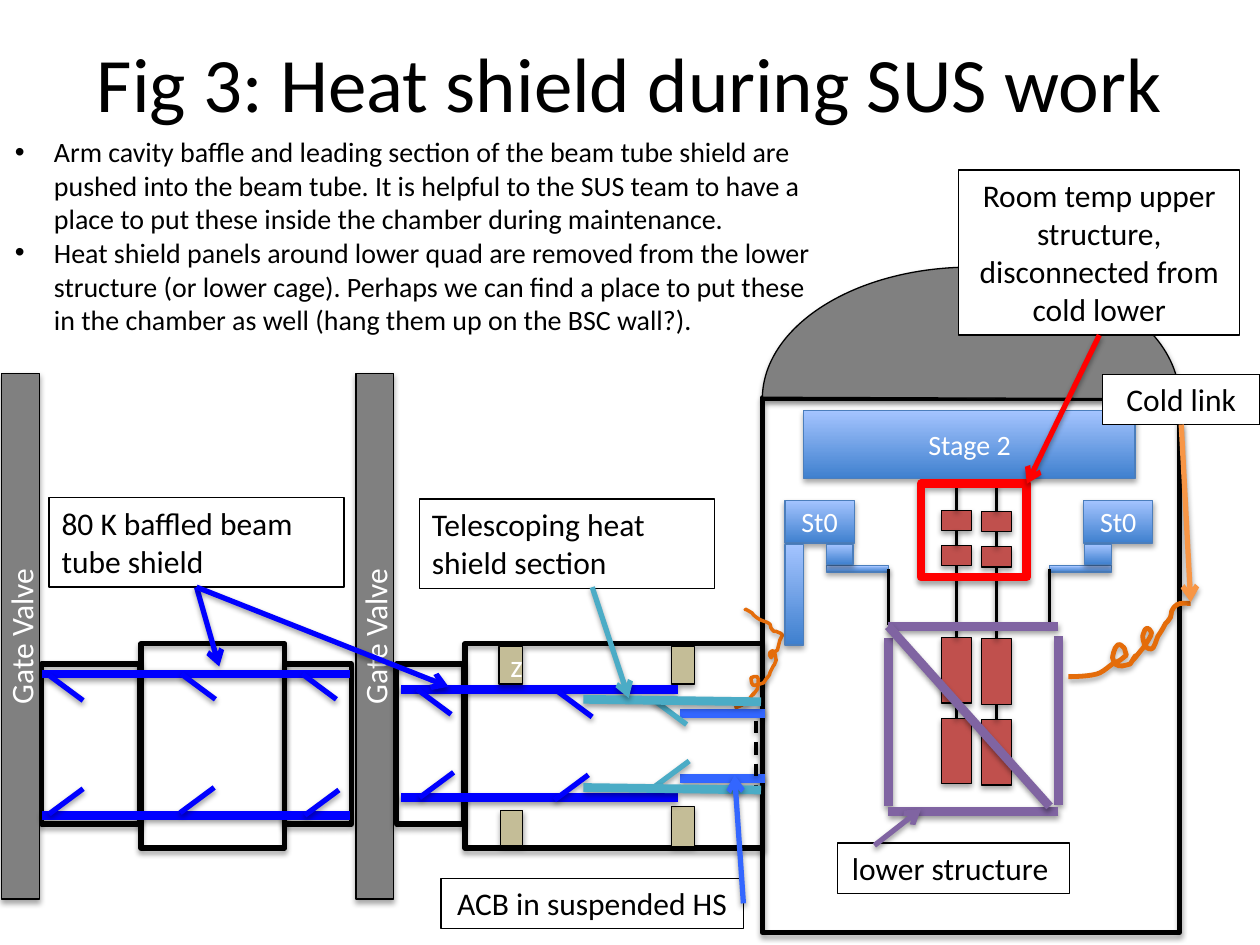
import lxml.etree
import pptx
import pptx.dml.color
import pptx.enum.dml
import pptx.enum.shapes
import pptx.enum.text
import pptx.oxml.ns
import pptx.util

Inches = pptx.util.Inches
qn = pptx.oxml.ns.qn
SHAPE = pptx.enum.shapes.MSO_SHAPE
ALIGN = pptx.enum.text.PP_ALIGN
ANCHOR = pptx.enum.text.MSO_ANCHOR
BOTTOM, RIGHT, TOP = 2, 3, 0

COLORS = {
    "black": "000000", "white": "FFFFFF", "gray": "808080", "red": "FF0000",
    "mass": "C0504D", "tan": "C4BD97", "blue": "0000FF", "acb": "3366FF",
    "teal": "4BACC6", "purple": "8064A2", "orange": "F79646", "wire": "E46C0A",
    "stage_line": "4B7EBC", "stage_dark": "3F80CE", "stage_light": "A4C4FF",
}


def rgb(name):
    return pptx.dml.color.RGBColor.from_string(COLORS[name])


class Diagram:
    """Holds the style and the slide; all positions are in inches."""
    font = "Calibri"

    def __init__(self, slide):
        self.slide = slide
        self.shapes = slide.shapes

    def format_text(self, shape, size, color, align):
        for paragraph in shape.text_frame.paragraphs:
            paragraph.alignment = align
            for run in paragraph.runs:
                run.font.name = self.font
                run.font.size = pptx.util.Pt(size)
                run.font.color.rgb = rgb(color)

    def outline(self, shape, color, width):
        shape.line.color.rgb = rgb(color)
        shape.line.width = pptx.util.Pt(width)

    def box(self, left, top, width, height, fill=None, line="black", weight=0.75,
            text="", size=18, kind=SHAPE.RECTANGLE, rotation=0):
        shape = self.shapes.add_shape(kind, *map(Inches, (left, top, width, height)))
        shape.rotation = rotation
        if fill:
            shape.fill.solid()
            shape.fill.fore_color.rgb = rgb(fill)
        else:
            shape.fill.background()
        self.outline(shape, line, weight)
        if text:
            shape.text_frame.text = text
            self.format_text(shape, size, "white", ALIGN.CENTER)
        return shape

    def gap(self, left, top, width, height):
        """Clear a white area without an outline."""
        shape = self.box(left, top, width, height, "white")
        shape.line.fill.background()
        shape.shadow.inherit = False

    def stage(self, left, top, width, height, text=""):
        shape = self.box(left, top, width, height, line="stage_line", text=text, size=16)
        shape.fill.gradient()
        shape.fill.gradient_angle = 90
        for stop, color in zip(shape.fill.gradient_stops, ("stage_dark", "stage_light")):
            stop.color.rgb = rgb(color)

    def text(self, left, top, width, height, text, size=18, align=ALIGN.CENTER):
        shape = self.shapes.add_textbox(*map(Inches, (left, top, width, height)))
        shape.text_frame.word_wrap = True
        shape.text_frame.text = text
        self.format_text(shape, size, "black", align)
        return shape

    def label(self, *args, fill="white", **options):
        shape = self.text(*args, **options)
        if fill:
            shape.fill.solid()
            shape.fill.fore_color.rgb = rgb(fill)
        self.outline(shape, "black", 0.75)
        return shape

    def bullets(self, left, top, width, height, items, size):
        shape = self.text(left, top, width, height, "\n".join(items), size, ALIGN.LEFT)
        for paragraph in shape.text_frame.paragraphs:
            properties = paragraph._p.get_or_add_pPr()
            properties.set("marL", str(Inches(0.31)))
            properties.set("indent", str(-Inches(0.31)))
            lxml.etree.SubElement(properties, qn("a:buFont")).set("typeface", "Arial")
            lxml.etree.SubElement(properties, qn("a:buChar")).set("char", "•")

    def line(self, start, end, color, weight, arrow=False):
        """Draw a line; each end is a point or a (shape, side) pair."""
        is_point = [isinstance(place[0], (int, float)) for place in (start, end)]
        first = start if is_point[0] else (0, 0)
        last = end if is_point[1] else (0, 0)
        connector = self.shapes.add_connector(
            pptx.enum.shapes.MSO_CONNECTOR.STRAIGHT, *map(Inches, (*first, *last)))
        if not is_point[0]:
            connector.begin_connect(*start)
        if not is_point[1]:
            connector.end_connect(*end)
        self.outline(connector, color, weight)
        if arrow:
            outline = connector._element.spPr.find(qn("a:ln"))
            lxml.etree.SubElement(outline, qn("a:tailEnd")).set("type", "arrow")
        return connector

    def curve(self, start, segments, color, weight):
        """Draw cubic segments (three points) and straight ones (one point)."""
        builder = self.shapes.build_freeform(*map(Inches, start))
        builder.add_line_segments(
            [tuple(map(Inches, point)) for segment in segments for point in segment], close=False)
        shape = builder.convert_to_shape()
        steps = iter(list(shape._element.iter(qn("a:lnTo"))))
        for segment in segments:
            first, *others = [next(steps) for _ in segment]
            if others:
                first.tag = qn("a:cubicBezTo")
            for other in others:
                first.append(other[0])
                other.getparent().remove(other)
        shape.fill.background()
        self.outline(shape, color, weight)


COLD_LINK = [
    ((8.5, 5.37), (8.67, 5.37), (8.73, 5.34)), ((8.77, 5.32), (8.8, 5.29), (8.83, 5.27)),
    ((8.89, 5.24),), ((8.94, 5.2),), ((8.93, 5.18), (8.93, 5.15), (8.92, 5.14)),
    ((8.91, 5.12), (8.88, 5.11), (8.87, 5.12)), ((8.84, 5.14), (8.83, 5.22), (8.83, 5.22)),
    ((8.84, 5.24), (8.84, 5.26), (8.85, 5.27)), ((8.89, 5.3), (8.93, 5.28), (8.97, 5.27)),
    ((9.09, 5.09), (8.9, 5.36), (9.05, 5.17)), ((9.08, 5.14), (9.12, 5.07), (9.12, 5.07)),
    ((9.13, 5.05), (9.14, 5.04), (9.14, 5.02)), ((9.09, 4.93), (9.07, 5.05), (9.07, 5.05)),
    ((9.07, 5.07), (9.08, 5.16), (9.14, 5.15)), ((9.16, 5.15), (9.18, 5.07), (9.19, 5.05)),
    ((9.21, 5.02), (9.23, 4.99), (9.25, 4.95)), ((9.26, 4.94), (9.28, 4.92), (9.29, 4.9)),
    ((9.29, 4.89), (9.3, 4.87), (9.3, 4.85)), ((9.31, 4.83), (9.32, 4.81), (9.34, 4.8)),
    ((9.37, 4.78), (9.42, 4.79), (9.45, 4.79))]
SHIELD_LINK = [
    ((5.86, 5.61), (5.91, 5.59), (5.93, 5.57)), ((5.94, 5.56), (5.95, 5.54), (5.96, 5.53)),
    ((6.03, 5.44), (5.93, 5.58), (6.01, 5.47)), ((6.01, 5.47), (6.03, 5.38), (6.01, 5.37)),
    ((5.99, 5.36), (5.97, 5.38), (5.96, 5.38)), ((5.97, 5.45), (5.96, 5.45), (6.06, 5.42)),
    ((6.07, 5.41), (6.07, 5.4), (6.08, 5.39)), ((6.13, 5.33), (6.09, 5.38), (6.12, 5.32)),
    ((6.17, 5.22), (6.12, 5.34), (6.16, 5.24)), ((6.15, 5.22), (6.16, 5.19), (6.14, 5.17)),
    ((6.14, 5.16), (6.11, 5.17), (6.11, 5.18)), ((6.1, 5.19), (6.11, 5.21), (6.12, 5.22)),
    ((6.13, 5.21), (6.13, 5.19), (6.14, 5.18)), ((6.15, 5.17), (6.16, 5.17), (6.17, 5.16)),
    ((6.18, 5.13), (6.18, 5.11), (6.19, 5.08)), ((6.21, 5.04),),
    ((6.2, 5.03), (6.19, 5.02), (6.18, 5.02)), ((6.17, 5.01), (6.15, 5.01), (6.14, 5.01)),
    ((6.09, 4.96), (6.14, 4.97), (6.09, 4.94)), ((6.08, 4.94), (6.07, 4.94), (6.06, 4.93)),
    ((6.03, 4.92), (6, 4.9), (5.98, 4.88)), ((5.97, 4.87), (5.97, 4.86), (5.96, 4.86)),
    ((5.88, 4.81), (5.94, 4.86), (5.91, 4.83))]


def draw_chamber(diagram):
    diagram.box(6.05, 3.16, 3.31, 4.24, weight=3)
    dome = diagram.box(6.66, 1.51, 2.09, 3.31, "gray", kind=SHAPE.CHORD, rotation=90)
    dome.adjustments[0], dome.adjustments[1] = 54.257, 162
    diagram.box(3.69, 5.11, 2.36, 1.62, weight=3)
    diagram.stage(6.38, 3.26, 2.63, 0.54, "Stage 2")
    for left in (6.23, 8.6):
        diagram.stage(left, 3.97, 0.55, 0.34, "St0")
    for left, top in ((7.47, 4.05), (7.79, 4.06)):
        masses = [diagram.box(left, top + drop, 0.24, height, "mass")
                  for drop, height in ((0, 0.16), (0.28, 0.16), (1.01, 0.52), (1.65, 0.52))]
        diagram.line((left + 0.12, 3.84), (masses[0], TOP), "black", 2)
        for upper, lower in zip(masses, masses[1:]):
            diagram.line((upper, BOTTOM), (lower, TOP), "black", 2)
    diagram.gap(6.11, 5.39, 0.77, 1.08)
    for arm, bracket, rod in ((6.56, 6.56, 7.05), (8.33, 8.61, 8.33)):
        diagram.stage(arm, 4.49, 0.49, 0.05)
        diagram.stage(bracket, 4.32, 0.21, 0.16)
        diagram.line((rod, 4.52), (rod, 4.96), "black", 2)
    diagram.curve((8.48, 5.37), COLD_LINK, "wire", 2.75)


def draw_beam_tube(diagram):
    diagram.box(0.89, 4.9, 4.17, 0.3, "gray", text="Gate Valve", rotation=270)
    diagram.box(3.15, 5.27, 0.53, 1.27, weight=3)
    diagram.curve((5.83, 5.62), SHIELD_LINK, "wire", 2)
    diagram.box(7.31, 3.84, 0.84, 0.74, line="red", weight=5)
    for left, top, height in ((5.33, 5.13, 0.3), (3.97, 6.43, 0.28), (5.33, 6.4, 0.32)):
        diagram.box(left, top, 0.18, height, "tan")
    diagram.gap(6.77, 5.72, 0.4, 0.45)
    for y in (5.66, 6.18):
        diagram.line((6.07, y), (5.4, y), "acb", 5)
    opening = diagram.line((6, 5.72), (6, 6.27), "black", 1.75)
    opening.line.dash_style = pptx.enum.dml.MSO_LINE.DASH
    for y in (5.47, 6.33):
        diagram.line((5.38, y), (3.18, y), "blue", 5)
    diagram.box(3.96, 5.13, 0.19, 0.3, "tan", text="z")
    diagram.gap(8.4, 5.86, 0.19, 0.27)
    for left, top, width, height in ((2.26, 5.27, 0.53, 1.27), (1.12, 5.11, 1.14, 1.62),
                                     (0.33, 5.27, 0.78, 1.27)):
        diagram.box(left, top, width, height, weight=3)
    diagram.box(-1.92, 4.9, 4.17, 0.3, "gray", text="Gate Valve", rotation=270)
    for y in (5.35, 6.47):
        diagram.line((2.78, y), (0.33, y), "blue", 5)
    upper = ((0.39, 5.36), (1.44, 5.35), (2.4, 5.35), (3.31, 5.47), (4.43, 5.49), (5.18, 5.55))
    lower = ((0.39, 6.46), (1.43, 6.45), (2.42, 6.47), (3.33, 6.33), (4.4, 6.35), (5.2, 6.24))
    for starts, rise in ((upper, 0.2), (lower, -0.2)):
        for x, y in starts:
            diagram.line((x, y), (x + 0.27, y + rise), "teal" if x > 5 else "blue", 3)


def draw_callouts(diagram):
    cold_link = diagram.label(8.75, 2.97, 1.25, 0.4, "Cold link")
    diagram.line((cold_link, BOTTOM), (9.45, 4.78), "orange", 3, arrow=True)
    room_temp = diagram.label(7.61, 1.35, 2.23, 1.31,
                              "Room temp upper structure, disconnected from cold lower")
    diagram.line((room_temp, BOTTOM), (8.15, 3.84), "red", 3, arrow=True)
    diagram.stage(6.23, 4.32, 0.15, 0.8)
    baffled = diagram.label(0.39, 3.95, 2.34, 0.71, "80 K baffled beam tube shield",
                            align=ALIGN.LEFT, fill=None)
    for target in ((1.74, 5.29), (3.56, 5.45)):
        diagram.line((baffled, BOTTOM), target, "blue", 3, arrow=True)
    for y in (5.55, 6.25):
        diagram.line((6.04, y + 0.02), (4.63, y), "teal", 5)
    diagram.label(3.33, 3.96, 2.34, 0.71, "Telescoping heat shield section",
                  align=ALIGN.LEFT, fill=None)
    diagram.line((4.7, 4.66), (4.99, 5.54), "teal", 3, arrow=True)
    suspended = diagram.label(3.5, 6.97, 2.4, 0.4, "ACB in suspended HS")
    diagram.line((suspended, RIGHT), (5.83, 6.15), "acb", 3, arrow=True)
    for start, end in (((7.05, 5.06), (7.05, 6.4)), ((8.4, 5.05), (8.4, 6.39)),
                       ((8.4, 4.97), (7.05, 4.97)), ((8.4, 6.44), (7.05, 6.44)),
                       ((8.33, 6.4), (7.05, 4.97))):
        diagram.line(start, end, "purple", 5)
    diagram.label(6.65, 6.69, 1.84, 0.4, "lower structure ")
    diagram.line((6.94, 6.71), (7.31, 6.42), "purple", 3, arrow=True)


def main():
    presentation = pptx.Presentation()
    presentation.slide_width, presentation.slide_height = Inches(10), Inches(7.5)
    diagram = Diagram(presentation.slides.add_slide(presentation.slide_layouts[6]))
    title = diagram.text(0.5, 0.02, 9, 1.25, "Fig 3: Heat shield during SUS work", size=44)
    title.text_frame.vertical_anchor = ANCHOR.MIDDLE
    draw_chamber(diagram)
    draw_beam_tube(diagram)
    draw_callouts(diagram)
    diagram.bullets(0.02, 1.02, 6.55, 1.72, (
        "Arm cavity baffle and leading section of the beam tube shield are pushed into the beam "
        "tube. It is helpful to the SUS team to have a place to put these inside the chamber "
        "during maintenance.",
        "Heat shield panels around lower quad are removed from the lower structure (or lower "
        "cage). Perhaps we can find a place to put these in the chamber as well (hang them up "
        "on the BSC wall?)."), 16)
    presentation.save("out.pptx")


if __name__ == "__main__":
    main()
